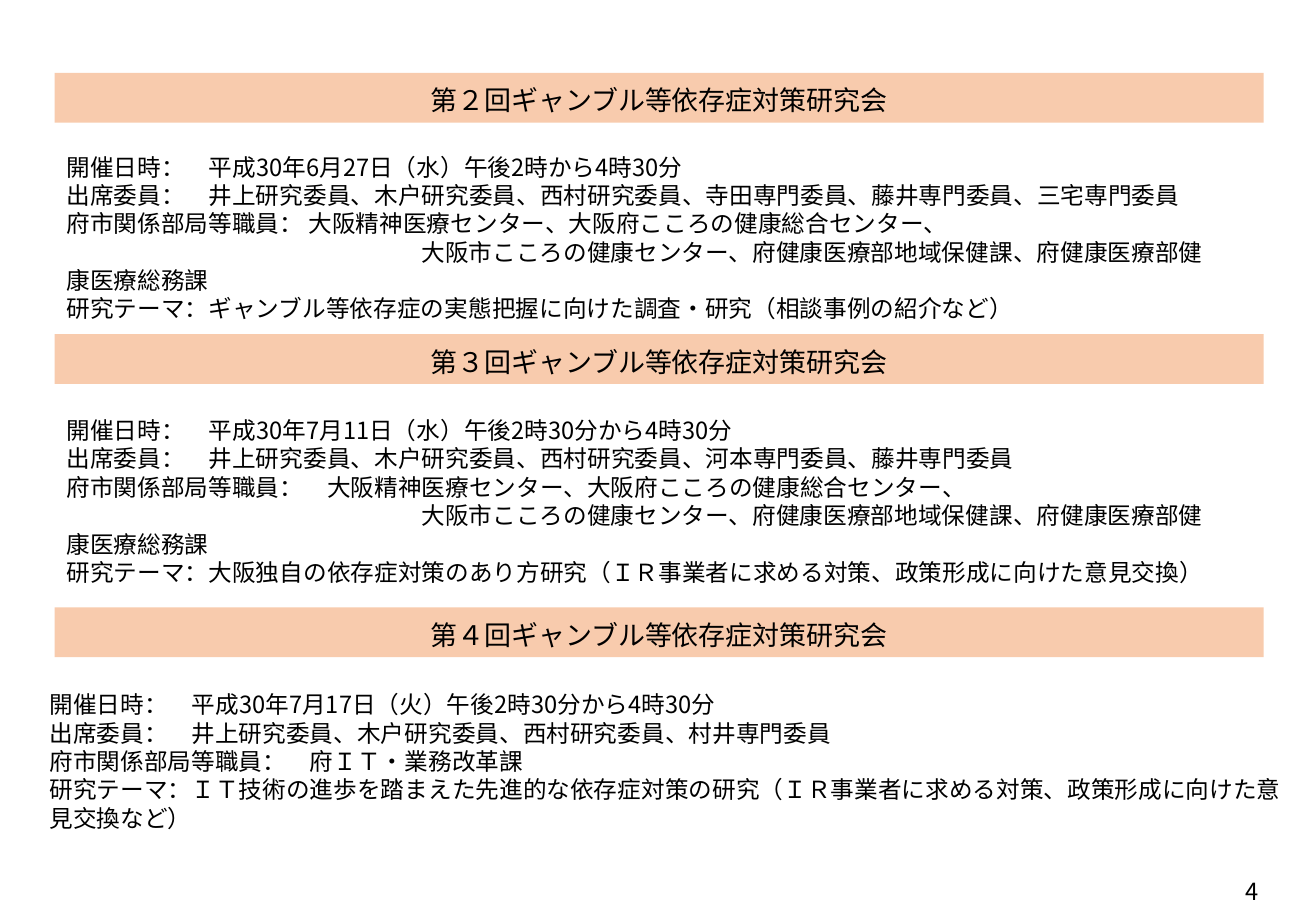
from pptx import Presentation
from pptx.dml.color import RGBColor
from pptx.enum.shapes import MSO_SHAPE
from pptx.enum.text import MSO_ANCHOR, PP_ALIGN
from pptx.oxml.ns import qn
from pptx.util import Inches, Pt
from lxml import etree

RECTANGLE = MSO_SHAPE.RECTANGLE
MIDDLE, BOTTOM = MSO_ANCHOR.MIDDLE, MSO_ANCHOR.BOTTOM
LEFT, CENTER = PP_ALIGN.LEFT, PP_ALIGN.CENTER

OFFICES = "大阪精神医療センター、大阪府こころの健康総合センター、"
MORE_OFFICES = "大阪市こころの健康センター、府健康医療部地域保健課、府健康医療部健康医療総務課"
OFFICE_INDENT = 2.92

MEETINGS = [
    (0.6, "第２回ギャンブル等依存症対策研究会", (0.45, 1.15, 9.68, 1.61), [
        ("開催日時：　平成30年6月27日（水）午後2時から4時30分", 0),
        ("出席委員：　井上研究委員、木戸研究委員、西村研究委員、寺田専門委員、藤井専門委員、三宅専門委員", 0),
        ("府市関係部局等職員： " + OFFICES, 0),
        (MORE_OFFICES, OFFICE_INDENT),
        ("研究テーマ：ギャンブル等依存症の実態把握に向けた調査・研究（相談事例の紹介など）", 0),
    ]),
    (2.75, "第３回ギャンブル等依存症対策研究会", (0.45, 3.32, 9.68, 1.61), [
        ("開催日時：　平成30年7月11日（水）午後2時30分から4時30分", 0),
        ("出席委員：　井上研究委員、木戸研究委員、西村研究委員、河本専門委員、藤井専門委員", 0),
        ("府市関係部局等職員：　" + OFFICES, 0),
        (MORE_OFFICES, OFFICE_INDENT),
        ("研究テーマ：大阪独自の依存症対策のあり方研究（ＩＲ事業者に求める対策、政策形成に向けた意見交換）", 0),
    ]),
    (5, "第４回ギャンブル等依存症対策研究会", (0.31, 5.46, 10.52, 1.61), [
        ("開催日時：　平成30年7月17日（火）午後2時30分から4時30分", 0),
        ("出席委員：　井上研究委員、木戸研究委員、西村研究委員、村井専門委員", 0),
        ("府市関係部局等職員：　府ＩＴ・業務改革課", 0),
        ("研究テーマ：ＩＴ技術の進歩を踏まえた先進的な依存症対策の研究（ＩＲ事業者に求める対策、政策形成に向けた意見交換など）", 0),
    ]),
]


def color(code):
    return RGBColor.from_string(code)


class Page:
    font = "Noto Sans CJK JP"
    ink = "000000"
    band = "F8CBAD"

    def __init__(self, deck):
        self.slide = deck.slides.add_slide(deck.slide_layouts[6])

    def add_span(self, para, text, size, align):
        para.alignment = align
        span = para.add_run()
        span.text = text
        span.font.size = Pt(size)
        span.font.name = self.font
        span.font.color.rgb = color(self.ink)
        east = etree.SubElement(span._r.get_or_add_rPr(), qn("a:ea"))
        east.set("typeface", self.font)

    def heading(self, top, text):
        bar = self.slide.shapes.add_shape(
            RECTANGLE, Inches(0.45), Inches(top), Inches(9.95), Inches(0.41))
        bar.shadow.inherit = False
        bar.fill.solid()
        bar.fill.fore_color.rgb = color(self.band)
        bar.line.fill.background()
        bar.text_frame.word_wrap = True
        bar.text_frame.vertical_anchor = BOTTOM
        para = bar.text_frame.paragraphs[0]
        para.line_spacing = 0.9
        self.add_span(para, text, 16, CENTER)

    def text(self, area, lines, align=LEFT):
        box = self.slide.shapes.add_textbox(*(Inches(length) for length in area))
        frame = box.text_frame
        frame.word_wrap = True
        frame.vertical_anchor = MIDDLE
        for number, (line, indent) in enumerate(lines):
            para = frame.add_paragraph() if number else frame.paragraphs[0]
            self.add_span(para, line, 14, align)
            if indent:
                para._p.get_or_add_pPr().set("indent", str(Inches(indent)))


def main():
    deck = Presentation()
    deck.slide_width = Inches(10.83)
    deck.slide_height = Inches(7.5)
    page = Page(deck)
    for top, title, area, lines in MEETINGS:
        page.heading(top, title)
        page.text(area, lines)
    page.text((10.09, 7.17, 0.43, 0.33), [("4", 0)], CENTER)
    deck.save("out.pptx")


if __name__ == "__main__":
    main()
